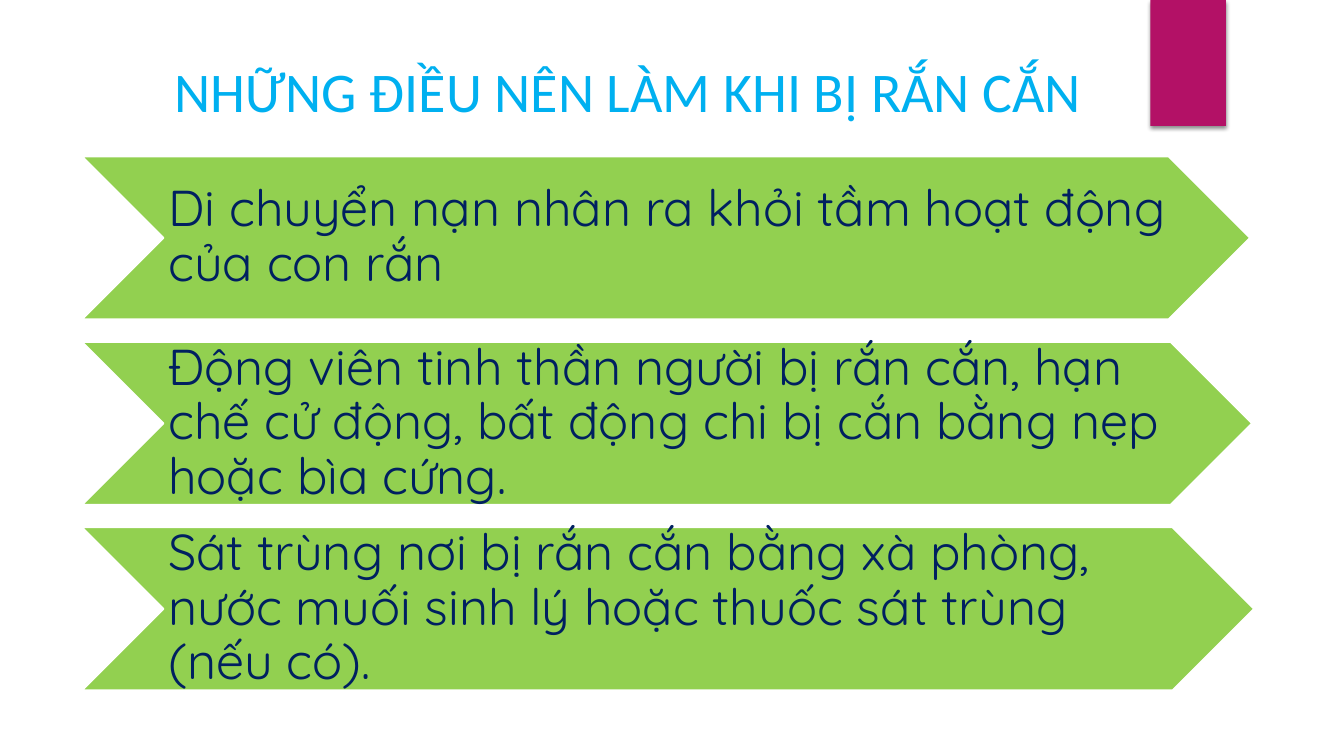
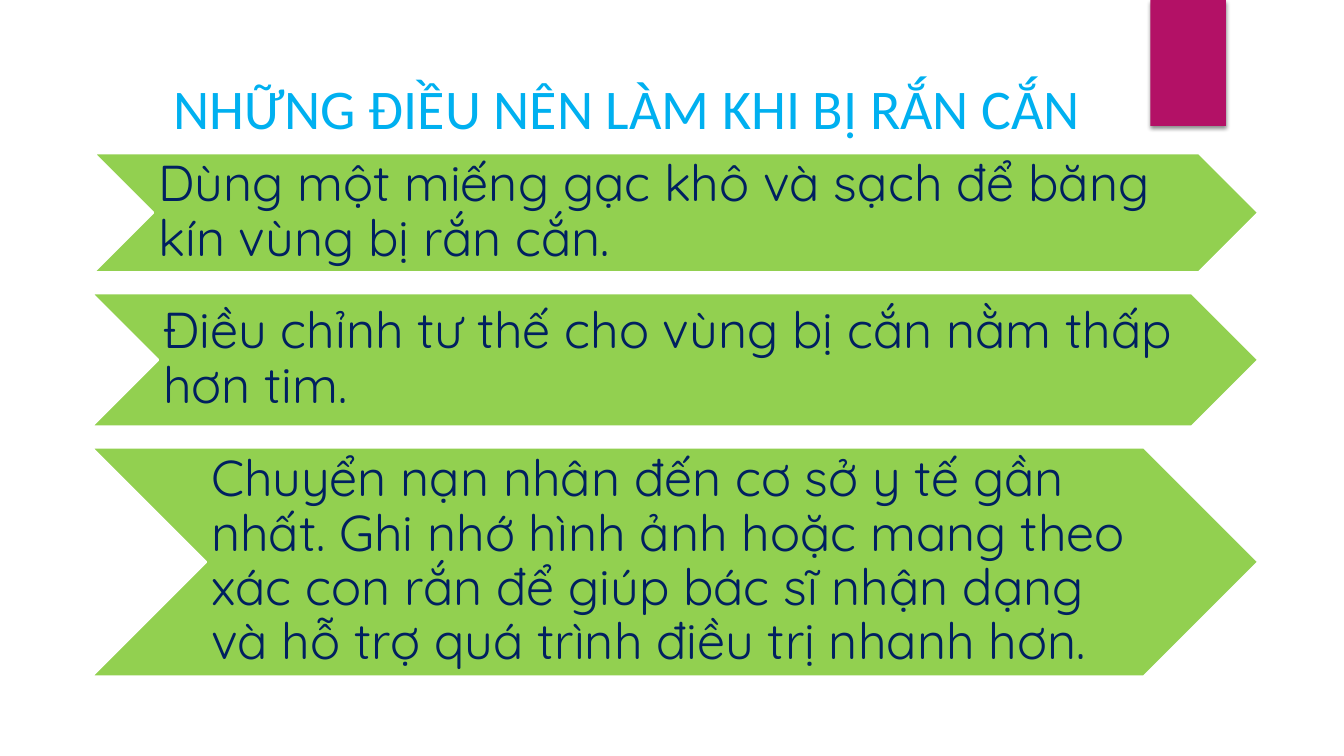
"""Build two slides of first-aid steps for snake bites, as chevron bands."""
from lxml.etree import SubElement
from pptx import Presentation
from pptx.dml.color import RGBColor
from pptx.enum.shapes import MSO_SHAPE
from pptx.enum.text import MSO_ANCHOR, MSO_AUTO_SIZE, PP_ALIGN
from pptx.oxml.ns import qn
from pptx.util import Inches, Pt

PINK = RGBColor(0xB3, 0x11, 0x66)
SKY = RGBColor(0x00, 0xB0, 0xF0)
LIME = RGBColor(0x92, 0xD0, 0x50)
NAVY = RGBColor(0x00, 0x20, 0x60)
WHITE = RGBColor(0xFF, 0xFF, 0xFF)

TITLE = "NHỮNG ĐIỀU NÊN LÀM KHI BỊ RẮN CẮN"
SLIDES = [
    {
        "title": (1.63, 0.51, 9.99, 0.94),
        "top": 1.55,
        "gap": 0.22,
        "steps": [
            (0.81, 12.40, 1.62, "Di chuyển nạn nhân ra khỏi tầm hoạt động của con rắn"),
            (0.81, 12.42, 1.62, "Động viên tinh thần người bị rắn cắn, hạn chế cử động, "
             "bất động chi bị cắn bằng nẹp hoặc bìa cứng."),
            (0.81, 12.44, 1.62, "Sát trùng nơi bị rắn cắn bằng xà phòng, nước muối sinh lý "
             "hoặc thuốc sát trùng (nếu có)."),
        ],
    },
    {
        "title": (1.62, 0.68, 9.84, 0.94),
        "top": 1.52,
        "gap": 0.21,
        "steps": [
            (0.93, 12.48, 1.18, "Dùng một miếng gạc khô và sạch để băng kín vùng bị rắn cắn."),
            (0.91, 12.48, 1.32, "Điều chỉnh tư thế cho vùng bị cắn nằm thấp hơn tim."),
            (0.91, 12.48, 2.27, "Chuyển nạn nhân đến cơ sở y tế gần nhất. Ghi nhớ hình ảnh "
             "hoặc mang theo xác con rắn để giúp bác sĩ nhận dạng và hỗ trợ quá trình "
             "điều trị nhanh hơn."),
        ],
    },
]


def write(shape, text, font, size, color, anchor):
    frame = shape.text_frame
    frame.word_wrap = True
    frame.auto_size = MSO_AUTO_SIZE.NONE
    frame.vertical_anchor = anchor
    para = frame.paragraphs[0]
    para.alignment = PP_ALIGN.LEFT
    run = para.add_run()
    run.text = text
    run.font.name = font
    run.font.size = Pt(size)
    run.font.color.rgb = color
    return frame


def add_tab(slide, layout):
    """Draw the corner tab and hand it to the layout, where all slides share it."""
    tab = slide.shapes.add_shape(
        MSO_SHAPE.RECTANGLE, Inches(11.41), 0, Inches(0.75), Inches(1.25))
    tab.fill.solid()
    tab.fill.fore_color.rgb = PINK
    tab.line.fill.background()
    tab.shadow.inherit = False
    effects = tab.element.spPr.find(qn("a:effectLst"))
    shade = SubElement(effects, qn("a:outerShdw"), blurRad=str(Pt(3)),
                       dist=str(Pt(2)), dir="5400000", rotWithShape="0")
    black = SubElement(shade, qn("a:srgbClr"), val="000000")
    SubElement(black, qn("a:alpha"), val="45000")
    tab.element.nvSpPr.cNvPr.set("id", "99")
    layout.shapes.element.append(tab.element)


def add_step(slide, left, top, right, height, text):
    step = slide.shapes.add_shape(
        MSO_SHAPE.CHEVRON, Inches(left), Inches(top), Inches(right - left), Inches(height))
    step.shadow.inherit = False
    step.fill.solid()
    step.fill.fore_color.rgb = LIME
    step.line.color.rgb = WHITE
    step.line.width = Pt(1.5)
    frame = write(step, text, "Quicksand", 36, NAVY, MSO_ANCHOR.MIDDLE)
    frame.margin_left = Inches(0.05)
    frame.margin_right = 0
    frame.margin_top = frame.margin_bottom = Inches(0.03)
    frame.paragraphs[0].line_spacing = 0.9


def main():
    deck = Presentation()
    deck.slide_width, deck.slide_height = Inches(13.33), Inches(7.5)
    layout = deck.slide_layouts[5]
    for index, page in enumerate(SLIDES):
        slide = deck.slides.add_slide(layout)
        if index == 0:
            add_tab(slide, layout)
        title = slide.shapes.title
        title.left, title.top, title.width, title.height = map(Inches, page["title"])
        write(title, TITLE, "Calibri", 40, SKY, MSO_ANCHOR.TOP)
        top = page["top"]
        for left, right, height, text in page["steps"]:
            add_step(slide, left, top, right, height, text)
            top += height + page["gap"]
    deck.save("out.pptx")


if __name__ == "__main__":
    main()
